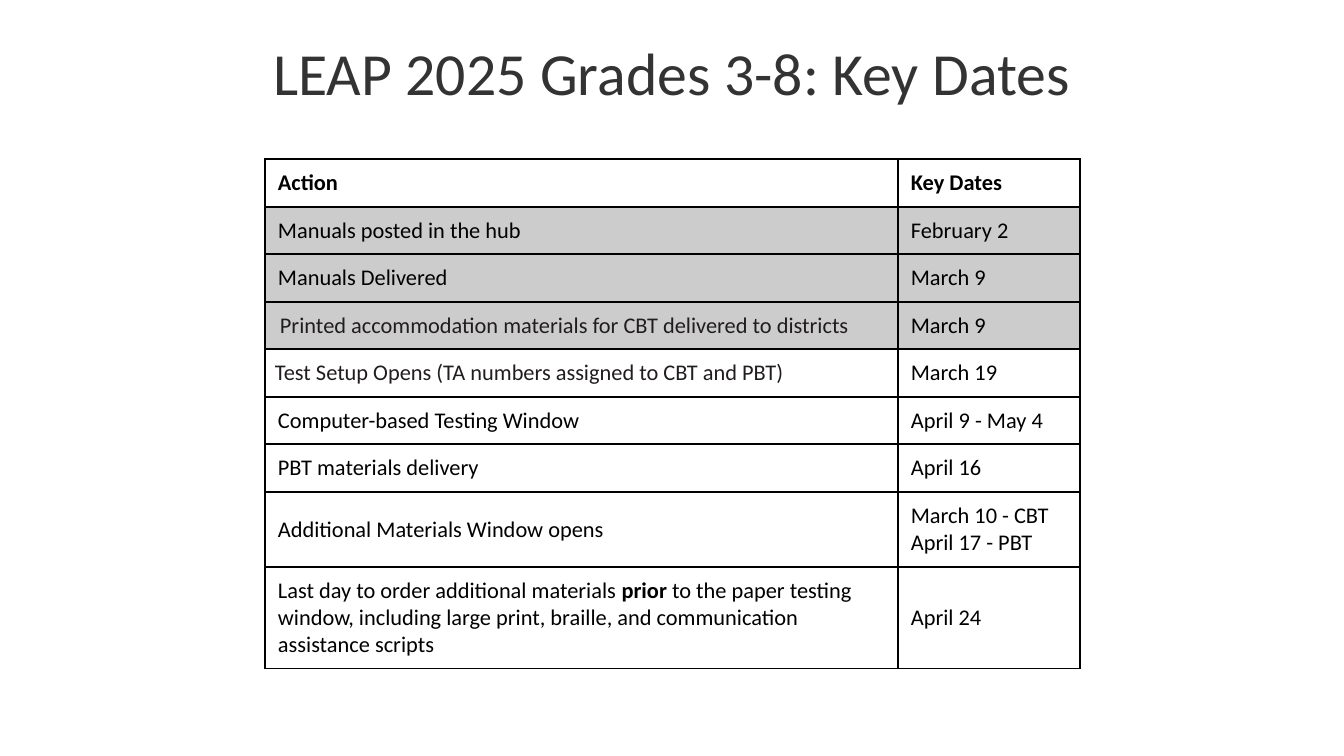
import pptx
import pptx.dml.color
import pptx.enum.text
import pptx.util
from lxml import etree
from pptx.oxml.ns import qn

EMU_PER_PX = 914400 / 134.4
FONT = "Calibri"
COLORS = {
    "title": "333333",
    "text": "000000",
    "soft": "211D1E",
    "border": "000000",
    "done": "CCCCCC",
    "open": "FFFFFF",
}

TITLE = "LEAP 2025 Grades 3-8: Key Dates"
LAST_DAY = [
    ("Last day to order additional materials ", False),
    ("prior", True),
    (" to the paper testing window, including large print, braille, "
     "and communication assistance scripts", False),
]
# Action, dates (one per line), row height, format of the row
SCHEDULE = [
    ("Action", ["Key Dates"], 48, {"bold": True}),
    ("Manuals posted in the hub", ["February 2"], 47, {"fill": "done"}),
    ("Manuals Delivered", ["March 9"], 48, {"fill": "done"}),
    ("Printed accommodation materials for CBT delivered to districts",
     ["March 9"], 47, {"fill": "done", "action_color": "soft", "inset": 15}),
    ("Test Setup Opens (TA numbers assigned to CBT and PBT)",
     ["March 19"], 48, {"action_color": "soft", "inset": 10}),
    ("Computer-based Testing Window", ["April 9 - May 4"], 47, {}),
    ("PBT materials delivery", ["April 16"], 48, {}),
    ("Additional Materials Window opens",
     ["March 10 - CBT", "April 17 - PBT"], 75, {}),
    (LAST_DAY, ["April 24"], 102, {}),
]
COLUMN_WIDTHS = [633, 182]
TABLE_LEFT, TABLE_TOP = 265, 159


def px(length):
    return pptx.util.Emu(round(length * EMU_PER_PX))


def rgb(name):
    return pptx.dml.color.RGBColor.from_string(COLORS[name])


def write(paragraph, text, size=12, color="text", bold=False, align=None):
    """Write a string, or a list of (string, bold) pieces, into a paragraph."""
    paragraph.alignment = align
    pieces = [(text, bold)] if isinstance(text, str) else text
    for words, is_bold in pieces:
        run = paragraph.add_run()
        run.text = words
        run.font.name = FONT
        run.font.size = pptx.util.Pt(size)
        run.font.bold = is_bold
        run.font.color.rgb = rgb(color)


def add_borders(cell):
    properties = cell._tc.get_or_add_tcPr()
    for side in ("lnL", "lnR", "lnT", "lnB"):
        line = etree.SubElement(properties, qn(f"a:{side}"),
                                w=str(pptx.util.Pt(0.75)))
        fill = etree.SubElement(line, qn("a:solidFill"))
        etree.SubElement(fill, qn("a:srgbClr"), val=COLORS["border"])


def fill_cell(cell, lines, fill="open", inset=13, **text_format):
    add_borders(cell)
    cell.fill.solid()
    cell.fill.fore_color.rgb = rgb(fill)
    cell.vertical_anchor = pptx.enum.text.MSO_ANCHOR.MIDDLE
    cell.margin_left = px(inset)
    cell.margin_right = px(10)
    cell.margin_top = cell.margin_bottom = px(9)
    frame = cell.text_frame
    for index, line in enumerate(lines):
        paragraph = frame.add_paragraph() if index else frame.paragraphs[0]
        write(paragraph, line, **text_format)


def add_title(slide):
    title = slide.shapes.title
    title.left, title.top, title.width, title.height = px(0), px(0), px(1344), px(143)
    frame = title.text_frame
    frame.auto_size = pptx.enum.text.MSO_AUTO_SIZE.NONE
    frame.vertical_anchor = pptx.enum.text.MSO_ANCHOR.MIDDLE
    frame.margin_left = frame.margin_right = px(13)
    frame.margin_top = frame.margin_bottom = px(13)
    write(frame.paragraphs[0], TITLE, size=32, color="title",
          align=pptx.enum.text.PP_ALIGN.CENTER)


def add_schedule(slide):
    height = sum(row[2] for row in SCHEDULE)
    schedule = slide.shapes.add_table(
        len(SCHEDULE), len(COLUMN_WIDTHS), px(TABLE_LEFT), px(TABLE_TOP),
        px(sum(COLUMN_WIDTHS)), px(height)).table
    schedule.first_row = schedule.horz_banding = False
    for column, width in zip(schedule.columns, COLUMN_WIDTHS):
        column.width = px(width)
    for row, (action, dates, row_height, style) in zip(schedule.rows, SCHEDULE):
        row.height = px(row_height)
        action_cell, dates_cell = row.cells
        shared = {"fill": style.get("fill", "open"),
                  "bold": style.get("bold", False)}
        fill_cell(action_cell, [action], inset=style.get("inset", 13),
                  color=style.get("action_color", "text"), **shared)
        fill_cell(dates_cell, dates, **shared)


def main():
    presentation = pptx.Presentation()
    presentation.slide_width, presentation.slide_height = px(1344), px(756)
    slide = presentation.slides.add_slide(presentation.slide_layouts[5])
    add_title(slide)
    add_schedule(slide)
    presentation.save("out.pptx")


if __name__ == "__main__":
    main()
